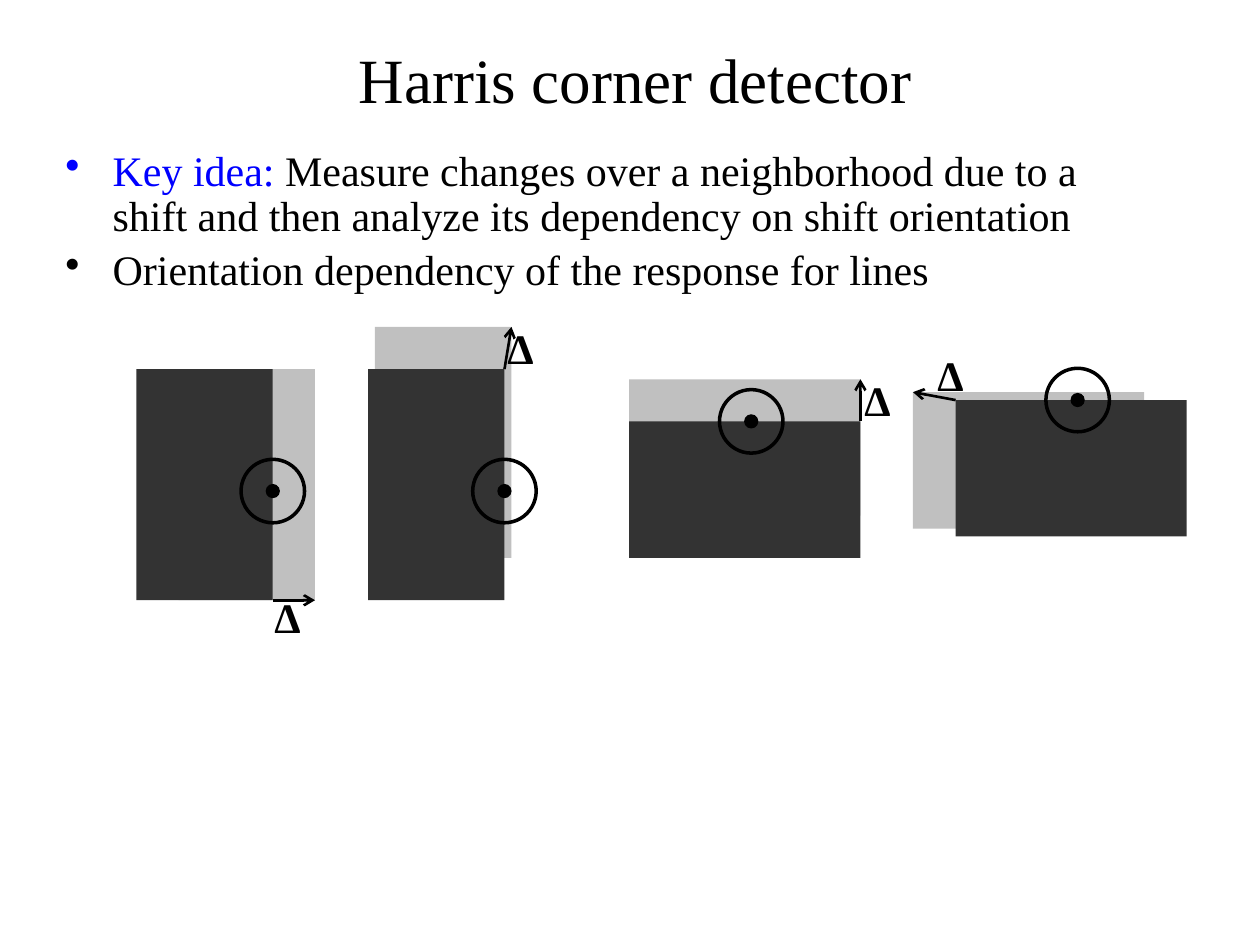
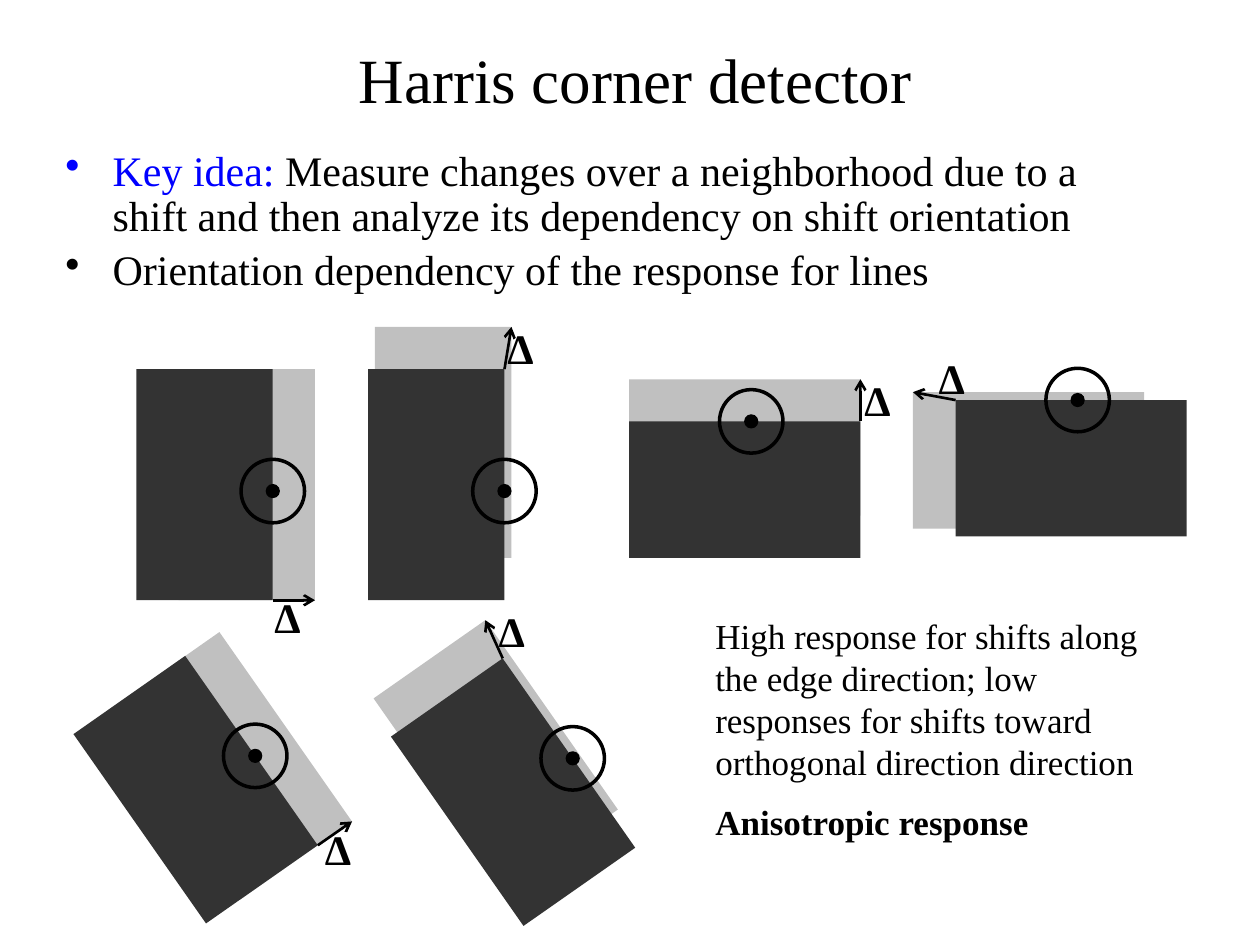
from dataclasses import dataclass, replace
from math import cos, radians, sin

from lxml import etree
from pptx import Presentation
from pptx.dml.color import RGBColor
from pptx.enum.shapes import MSO_CONNECTOR, MSO_SHAPE
from pptx.enum.text import MSO_ANCHOR, PP_ALIGN
from pptx.oxml.ns import qn
from pptx.util import Cm, Pt

RECTANGLE, ELLIPSE = MSO_SHAPE.RECTANGLE, MSO_SHAPE.OVAL
STRAIGHT = MSO_CONNECTOR.STRAIGHT
LEFT, CENTER = PP_ALIGN.LEFT, PP_ALIGN.CENTER
TOP, MIDDLE = MSO_ANCHOR.TOP, MSO_ANCHOR.MIDDLE

BLACK = RGBColor(0x00, 0x00, 0x00)
BLUE = RGBColor(0x00, 0x00, 0xFF)
DARK_GRAY = RGBColor(0x33, 0x33, 0x33)
LIGHT_GRAY = RGBColor(0xC0, 0xC0, 0xC0)
FONT = "Times New Roman"

# Lengths in centimetres
PATCH_WIDTH, PATCH_HEIGHT = 2.75, 4.66
DOT_SIZE, WINDOW_SIZE = 0.26, 1.28
WINDOW_DROP = 0.13  # from the middle of the patch edge, along that edge
BULLET_INDENT = 0.95


@dataclass(frozen=True)
class ShiftedPatch:
    """A dark patch, its shifted copy and the delta arrow between them."""
    left: float
    top: float
    rotation: int
    shift: tuple
    corner: int  # end of the patch edge where the arrow starts: -1 top, 1 bottom
    label_offset: tuple  # from that corner to the label box


VERTICAL_EDGES = [
    ShiftedPatch(2.75, 7.44, 0, (0.85, 0), 1, (-0.22, -0.31)),
    ShiftedPatch(7.42, 7.44, 0, (0.14, -0.85), -1, (-0.19, -1.06)),
]
HORIZONTAL_EDGES = [
    ShiftedPatch(13.64, 7.54, 270, (0, -0.85), 1, (-0.17, -1.06)),
    ShiftedPatch(20.22, 7.11, 270, (-0.86, -0.16), -1, (-0.62, -1.15)),
]
TILTED_EDGES = [
    ShiftedPatch(8.97, 13.64, 325, (-0.35, -0.77), -1, (-0.33, -1.2)),
    ShiftedPatch(2.57, 13.59, 325, (0.69, -0.48), 1, (-0.11, -0.56)),
]


def add_text(slide, box, paragraphs, size=24, align=LEFT, anchor=TOP,
             line_spacing=1.0, space_before=0.0, bullet=None):
    """Each paragraph is a list of (text, color, bold) runs."""
    shape = slide.shapes.add_textbox(*(Cm(length) for length in box))
    frame = shape.text_frame
    frame.word_wrap = True
    frame.vertical_anchor = anchor
    for index, runs in enumerate(paragraphs):
        paragraph = frame.add_paragraph() if index else frame.paragraphs[0]
        paragraph.alignment = align
        paragraph.line_spacing = line_spacing
        paragraph.space_before = Pt(size * space_before)
        if bullet:
            properties = paragraph._p.get_or_add_pPr()
            properties.set("marL", str(Cm(BULLET_INDENT)))
            properties.set("indent", str(-Cm(BULLET_INDENT)))
            etree.SubElement(properties, qn("a:buChar"), char=bullet)
        for text, color, bold in runs:
            run = paragraph.add_run()
            run.text = text
            run.font.name = FONT
            run.font.size = Pt(size)
            run.font.bold = bold
            run.font.color.rgb = color


def add_centered(group, kind, center, size, rotation=0, fill=None, line_width=0):
    (x, y), (width, height) = center, size
    shape = group.shapes.add_shape(kind, Cm(x - width / 2), Cm(y - height / 2),
                                   Cm(width), Cm(height))
    shape.shadow.inherit = False
    shape.rotation = rotation
    if fill is None:
        shape.fill.background()
    else:
        shape.fill.solid()
        shape.fill.fore_color.rgb = fill
    if line_width:
        shape.line.color.rgb = BLACK
        shape.line.width = Pt(line_width)
    else:
        shape.line.fill.background()


def add_arrow(group, start, end):
    arrow = group.shapes.add_connector(
        STRAIGHT, *(Cm(length) for length in (*start, *end)))
    arrow.line.color.rgb = BLACK
    arrow.line.width = Pt(1.5)
    etree.SubElement(arrow.line._get_or_add_ln(), qn("a:tailEnd"), type="arrow")
    etree.SubElement(arrow._element.spPr, qn("a:effectLst"))


def moved(point, offset):
    return point[0] + offset[0], point[1] + offset[1]


def add_shifted_patch(slide, patch):
    center = (patch.left + PATCH_WIDTH / 2, patch.top + PATCH_HEIGHT / 2)
    angle = radians(patch.rotation)

    def on_patch(across, down):
        """Slide position of a point given along the patch's own axes."""
        return moved(center, (across * cos(angle) - down * sin(angle),
                              across * sin(angle) + down * cos(angle)))

    group = slide.shapes.add_group_shape()
    # Shifted patch behind, dark patch in front
    size = (PATCH_WIDTH, PATCH_HEIGHT)
    add_centered(group, RECTANGLE, moved(center, patch.shift), size,
                 patch.rotation, LIGHT_GRAY)
    add_centered(group, RECTANGLE, center, size, patch.rotation, DARK_GRAY)
    # Observed point and its neighborhood on the patch edge
    observed = on_patch(PATCH_WIDTH / 2, WINDOW_DROP)
    add_centered(group, ELLIPSE, observed, (DOT_SIZE, DOT_SIZE),
                 fill=BLACK, line_width=0.75)
    add_centered(group, ELLIPSE, observed, (WINDOW_SIZE, WINDOW_SIZE), line_width=2)
    # Shift arrow with its label
    corner = on_patch(PATCH_WIDTH / 2, patch.corner * PATCH_HEIGHT / 2)
    add_arrow(group, corner, moved(corner, patch.shift))
    add_text(slide, (*moved(corner, patch.label_offset), 1.07, 1.27),
             [[("Δ", BLACK, True)]])


def add_detector_slide(presentation, patches):
    """Title, key idea and a set of shifted patches."""
    slide = presentation.slides.add_slide(presentation.slide_layouts[6])
    add_text(slide, (1.63, 0.48, 22.35, 2.18),
             [[("Harris corner detector", BLACK, False)]],
             size=36, align=CENTER, anchor=MIDDLE)
    add_text(slide, (1.07, 2.9, 22.43, 14.63), [
        [("Key idea:", BLUE, False),
         (" Measure changes over a neighborhood due to a shift and then analyze "
          "its dependency on shift orientation", BLACK, False)],
        [("Orientation dependency of the response for lines", BLACK, False)],
    ], line_spacing=0.9, space_before=0.2, bullet="•")
    for patch in patches:
        add_shifted_patch(slide, patch)
    return slide


def add_conclusion(slide, box):
    add_text(slide, box, [
        [("High response for shifts along the edge direction; low responses for "
          "shifts toward orthogonal direction direction", BLACK, False)],
        [("Anisotropic response", BLACK, True)],
    ], size=20, space_before=0.5)


def main():
    presentation = Presentation()
    presentation.slide_width, presentation.slide_height = Cm(25.4), Cm(19.05)

    add_detector_slide(presentation, VERTICAL_EDGES + HORIZONTAL_EDGES)

    # The second slide adds tilted edges and lowers one label
    upward, leftward = HORIZONTAL_EDGES
    leftward = replace(leftward, label_offset=(-0.59, -1.08))
    slide = add_detector_slide(
        presentation, VERTICAL_EDGES + TILTED_EDGES + [upward, leftward])
    add_conclusion(slide, (14.17, 12.27, 9.53, 4.9))

    presentation.save("out.pptx")


if __name__ == "__main__":
    main()
